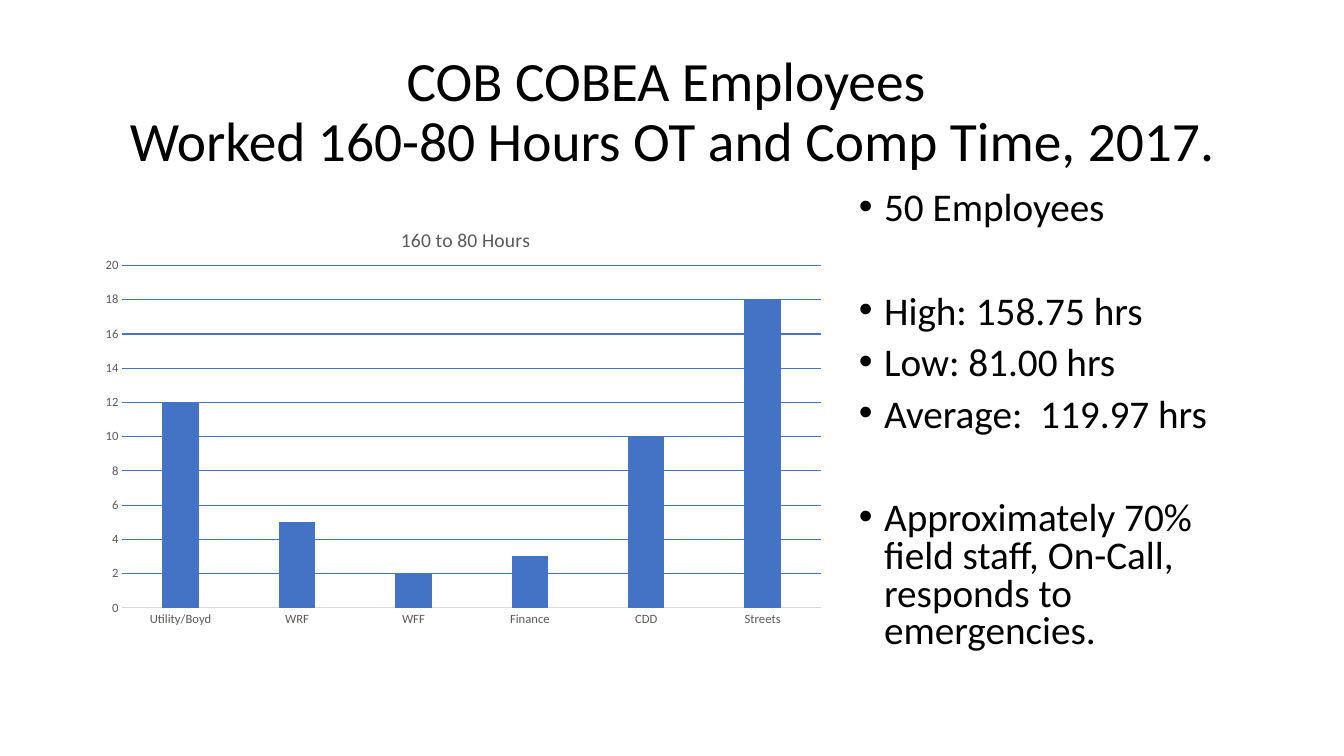
from lxml import etree
from pptx import Presentation
from pptx.chart.data import CategoryChartData
from pptx.dml.color import RGBColor
from pptx.enum.chart import XL_CHART_TYPE, XL_TICK_MARK
from pptx.enum.text import MSO_ANCHOR, PP_ALIGN
from pptx.oxml.ns import qn
from pptx.util import Inches, Pt

BLACK = RGBColor(0x00, 0x00, 0x00)
GRAY = RGBColor(0x59, 0x59, 0x59)
PALE = RGBColor(0xD9, 0xD9, 0xD9)
BLUE = RGBColor(0x44, 0x72, 0xC4)
COLUMN = XL_CHART_TYPE.COLUMN_CLUSTERED
NO_TICK = XL_TICK_MARK.NONE
MIDDLE = MSO_ANCHOR.MIDDLE
CENTER = PP_ALIGN.CENTER
FONT = "Calibri"
TITLE_ONLY = 5

TITLE = "COB COBEA Employees \vWorked 160-80 Hours OT and Comp Time, 2017."
FACTS = [
    ["50 Employees"],
    ["High: 158.75 hrs", "Low: 81.00 hrs", "Average:  119.97 hrs"],
    ["Approximately 70% field staff, On-Call, responds to emergencies."],
]
HOURS = {"Utility/Boyd": 12, "WRF": 5, "WFF": 2, "Finance": 3, "CDD": 10, "Streets": 18}


class Deck:
    """Holds the style and the current slide; lengths are percent of the slide."""

    def __init__(self):
        self.prs = Presentation()
        self.prs.slide_width = Inches(13.33)
        self.prs.slide_height = Inches(7.5)
        self.slide = self.prs.slides.add_slide(self.prs.slide_layouts[TITLE_ONLY])

    def box(self, left, top, width, height):
        """Turn percentages into slide lengths."""
        wide, high = self.prs.slide_width / 100, self.prs.slide_height / 100
        return int(left * wide), int(top * high), int(width * wide), int(height * high)

    def style(self, font, size, color=BLACK):
        """Set the face, size and colour of a font."""
        font.name, font.size, font.bold = FONT, Pt(size), False
        font.color.rgb = color

    def title(self, text, *area):
        """Place and fill the title."""
        shape = self.slide.shapes.title
        shape.left, shape.top, shape.width, shape.height = self.box(*area)
        frame = shape.text_frame
        frame.text, frame.vertical_anchor = text, MIDDLE
        para = frame.paragraphs[0]
        para.alignment, para.line_spacing = CENTER, 0.9
        self.style(para.font, 39.6)

    def bullets(self, groups, *area):
        """Add groups of bullets with a wide gap between groups."""
        frame = self.slide.shapes.add_textbox(*self.box(*area)).text_frame
        frame.word_wrap = True
        items = [(text, row == 0 and index > 0)
                 for index, group in enumerate(groups) for row, text in enumerate(group)]
        for index, (text, apart) in enumerate(items):
            para = frame.add_paragraph() if index else frame.paragraphs[0]
            para.text, para.line_spacing = text, 0.8
            para.space_before = Pt(47 if apart else 10)
            self.style(para.font, 28)
            props = para._p.get_or_add_pPr()
            props.set("marL", str(Inches(0.25)))
            props.set("indent", str(-Inches(0.25)))
            etree.SubElement(props, qn("a:buFont")).set("typeface", "Arial")
            etree.SubElement(props, qn("a:buChar")).set("char", "•")
            props.append(props.find(qn("a:defRPr")))

    def layout(self, parent, index, **parts):
        """Fix the place of a chart part."""
        old = parent.find(qn("c:layout"))
        if old is not None:
            parent.remove(old)
        node = etree.Element(qn("c:layout"))
        manual = etree.SubElement(node, qn("c:manualLayout"))
        for name, value in parts.items():
            etree.SubElement(manual, qn(f"c:{name}")).set("val", str(value))
        parent.insert(index, node)

    def columns(self, name, values, *area):
        """Add a column chart."""
        data = CategoryChartData()
        data.categories = list(values)
        data.add_series("Series 1", list(values.values()))
        chart = self.slide.shapes.add_chart(COLUMN, *self.box(*area), data).chart
        chart.has_legend = False
        self.style(chart.font, 10)
        chart.has_title = True
        head = chart.chart_title
        head.text_frame.text = name
        self.style(head.text_frame.paragraphs[0].font, 14, GRAY)
        self.layout(head._element, 1, xMode="edge", yMode="edge", x=0.41, y=0.05)
        plot = chart.plots[0]
        plot.gap_width, plot.overlap, plot.vary_by_categories = 219, -27, False
        fill = plot.series[0].format.fill
        fill.solid()
        fill.fore_color.rgb = BLUE
        for axis in (chart.category_axis, chart.value_axis):
            axis.major_tick_mark = axis.minor_tick_mark = NO_TICK
            self.style(axis.tick_labels.font, 9, GRAY)
        scale = chart.value_axis
        scale.minimum_scale, scale.maximum_scale, scale.major_unit = 0, 20, 2
        scale.format.line.fill.background()
        for line, color in ((chart.category_axis.format.line, PALE),
                            (scale.major_gridlines.format.line, BLUE)):
            line.color.rgb, line.width = color, Pt(0.75)
        area_node = chart._chartSpace.find(".//" + qn("c:plotArea"))
        self.layout(area_node, 0, layoutTarget="inner", xMode="edge", yMode="edge",
                    x=0.04, y=0.15, w=0.94, h=0.79)


def main():
    """Build the slide."""
    deck = Deck()
    deck.title(TITLE, 6.9, 5.33, 86.27, 19.33)
    deck.bullets(FACTS, 63.17, 24.67, 30, 65.47)
    deck.columns("160 to 80 Hours", HOURS, 6.9, 26.53, 55.29, 57.33)
    deck.prs.save("out.pptx")


if __name__ == "__main__":
    main()
